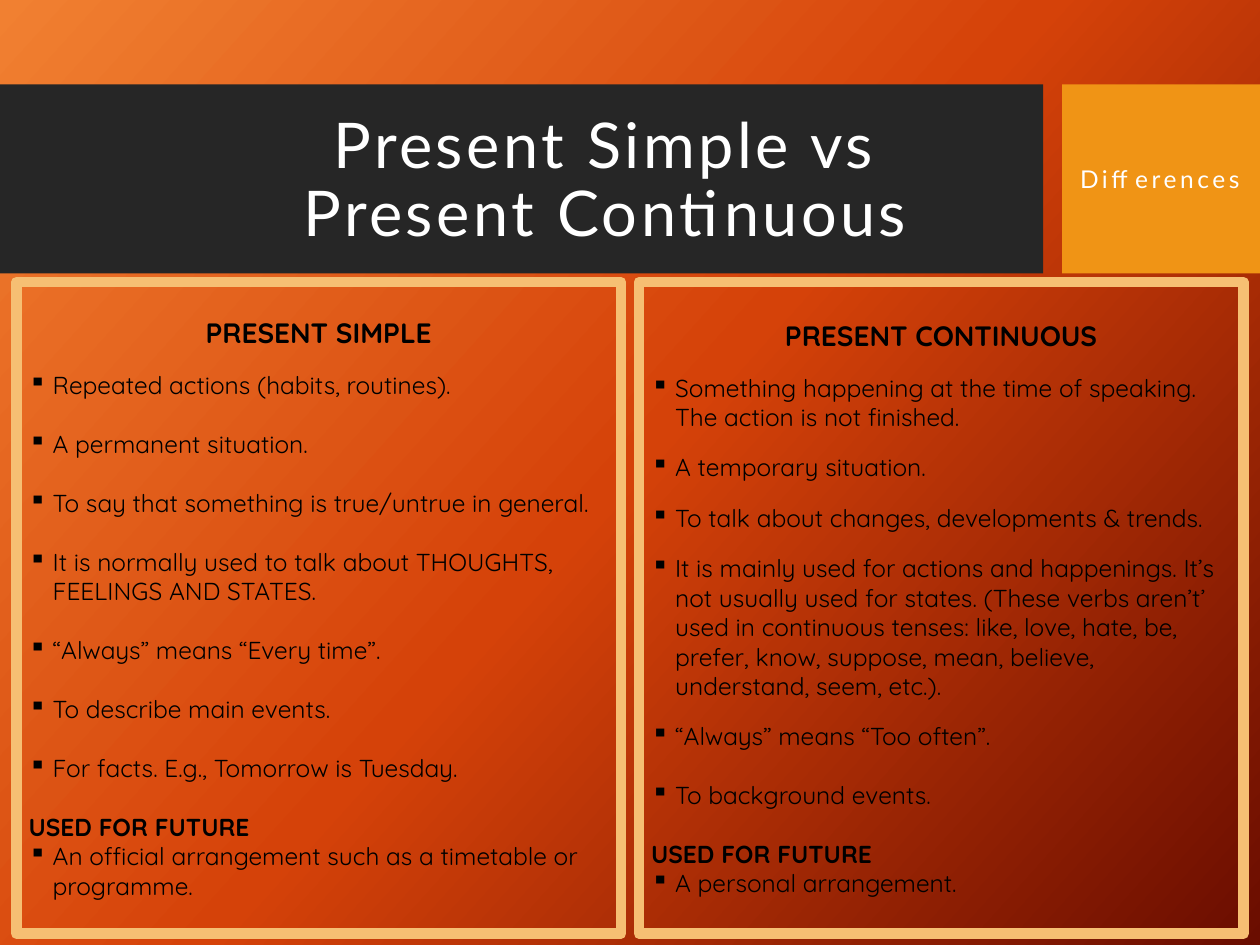
from copy import deepcopy
from dataclasses import dataclass

from pptx import Presentation
from pptx.dml.color import RGBColor
from pptx.enum.shapes import MSO_SHAPE
from pptx.enum.text import MSO_ANCHOR, PP_ALIGN
from pptx.oxml.ns import qn
from pptx.util import Inches, Pt

RECTANGLE = MSO_SHAPE.RECTANGLE
MIDDLE = MSO_ANCHOR.MIDDLE
CENTER, LEFT = PP_ALIGN.CENTER, PP_ALIGN.LEFT


@dataclass(frozen=True)
class Theme:
    gradient: tuple = ((0, "F18031"), (0.5, "D54209"), (1, "6A0D00"))
    gradient_angle: int = 318
    band: str = "262626"
    accent: str = "F09415"
    frame: str = "F6BF73"
    light: str = "FFFFFF"
    dark: str = "000000"
    title_font: str = "Lato"
    body_font: str = "Quicksand"
    title_size: int = 36
    heading_size: int = 16
    body_size: int = 14
    small_gap: int = 12
    full_gap: float = 16.8


THEME = Theme()

SIMPLE = (
    "PRESENT SIMPLE",
    [
        ("Repeated actions (habits, routines).", THEME.small_gap),
        ("A permanent situation.", THEME.full_gap),
        ("To say that something is true/untrue in general.", THEME.full_gap),
        ("It is normally used to talk about THOUGHTS, FEELINGS AND STATES.", THEME.full_gap),
        ("“Always” means “Every time”.", THEME.full_gap),
        ("To describe main events.", THEME.full_gap),
        ("For facts. E.g., Tomorrow is Tuesday.", THEME.full_gap),
    ],
    "An official arrangement such as a timetable or programme.",
)
CONTINUOUS = (
    "PRESENT CONTINUOUS",
    [
        ("Something happening at the time of speaking. The action is not finished.", THEME.small_gap),
        ("A temporary situation.", THEME.small_gap),
        ("To talk about changes, developments & trends.", THEME.small_gap),
        ("It is mainly used for actions and happenings. It’s not usually used for states. "
         "(These verbs aren’t’ used in continuous tenses: like, love, hate, be, prefer, know, "
         "suppose, mean, believe, understand, seem, etc.).", THEME.small_gap),
        ("“Always” means “Too often”.", THEME.small_gap),
        ("To background events.", THEME.full_gap),
    ],
    "A personal arrangement.",
)


def paint_background(slide):
    fill = slide.background.fill
    fill.gradient()
    fill.gradient_angle = THEME.gradient_angle
    stop_list = slide.element.find(".//" + qn("a:gsLst"))
    stop_list.append(deepcopy(stop_list[-1]))
    for stop, (position, color) in zip(fill.gradient_stops, THEME.gradient):
        stop.position = position
        stop.color.rgb = RGBColor.from_string(color)


def add_block(slide, box, color):
    shape = slide.shapes.add_shape(RECTANGLE, *map(Inches, box))
    shape.shadow.inherit = False
    shape.fill.solid()
    shape.fill.fore_color.rgb = RGBColor.from_string(color)
    shape.line.fill.background()


def style_font(font, name, size, color, bold=False):
    font.name = name
    font.size = Pt(size)
    font.bold = bold
    font.color.rgb = RGBColor.from_string(color)


def add_title_text(slide, box, text, size):
    frame = slide.shapes.add_textbox(*map(Inches, box)).text_frame
    frame.word_wrap = True
    frame.vertical_anchor = MIDDLE
    paragraph = frame.paragraphs[0]
    paragraph.text = text
    paragraph.alignment = CENTER
    paragraph.line_spacing = 0.9
    paragraph.space_after = Pt(6)
    style_font(paragraph.font, THEME.title_font, size, THEME.light)
    for run in paragraph.runs:
        run.font._element.set("spc", "200")


def add_header(slide, top, height):
    add_block(slide, (0, top, 8.28, height), THEME.band)
    add_block(slide, (8.43, top, 1.57, height), THEME.accent)
    add_title_text(slide, (0.23, top - 0.05, 9.15, height + 0.15),
                   "Present Simple vs\vPresent Continuous", THEME.title_size)
    add_title_text(slide, (8.41, top + 0.01, 1.59, height + 0.01),
                   "Differences", THEME.body_size)


def add_bullet(paragraph):
    properties = paragraph._p.get_or_add_pPr()
    properties.set("marL", str(Inches(0.19)))
    properties.set("indent", str(-Inches(0.19)))
    bullet = properties.makeelement(qn("a:buChar"), {"char": "▪"})
    properties.append(bullet)


def add_panel(slide, box, content):
    heading, uses, future_use = content
    shape = slide.shapes.add_shape(RECTANGLE, *map(Inches, box))
    shape.shadow.inherit = False
    shape.fill.background()
    shape.line.color.rgb = RGBColor.from_string(THEME.frame)
    shape.line.width = Pt(6)
    frame = shape.text_frame
    frame.word_wrap = True
    frame.vertical_anchor = MIDDLE

    paragraph = frame.paragraphs[0]
    paragraph.text = heading
    paragraph.alignment = CENTER
    style_font(paragraph.font, THEME.body_font, THEME.heading_size, THEME.dark, True)

    rows = [(text, gap, True) for text, gap in uses]
    rows += [("USED FOR FUTURE", THEME.full_gap, False), (future_use, 0, True)]
    for text, gap, bulleted in rows:
        paragraph = frame.add_paragraph()
        paragraph.text = text
        paragraph.alignment = LEFT
        paragraph.space_before = Pt(gap)
        if bulleted:
            add_bullet(paragraph)
        style_font(paragraph.font, THEME.body_font, THEME.body_size, THEME.dark, not bulleted)


def main():
    presentation = Presentation()
    presentation.slide_width = Inches(10)
    presentation.slide_height = Inches(7.5)
    slide = presentation.slides.add_slide(presentation.slide_layouts[6])
    paint_background(slide)
    add_header(slide, 0.67, 1.5)
    for index, content in enumerate((SIMPLE, CONTINUOUS)):
        add_panel(slide, (0.13 + index * 4.94, 2.24, 4.8, 5.17), content)
    presentation.save("out.pptx")


if __name__ == "__main__":
    main()
